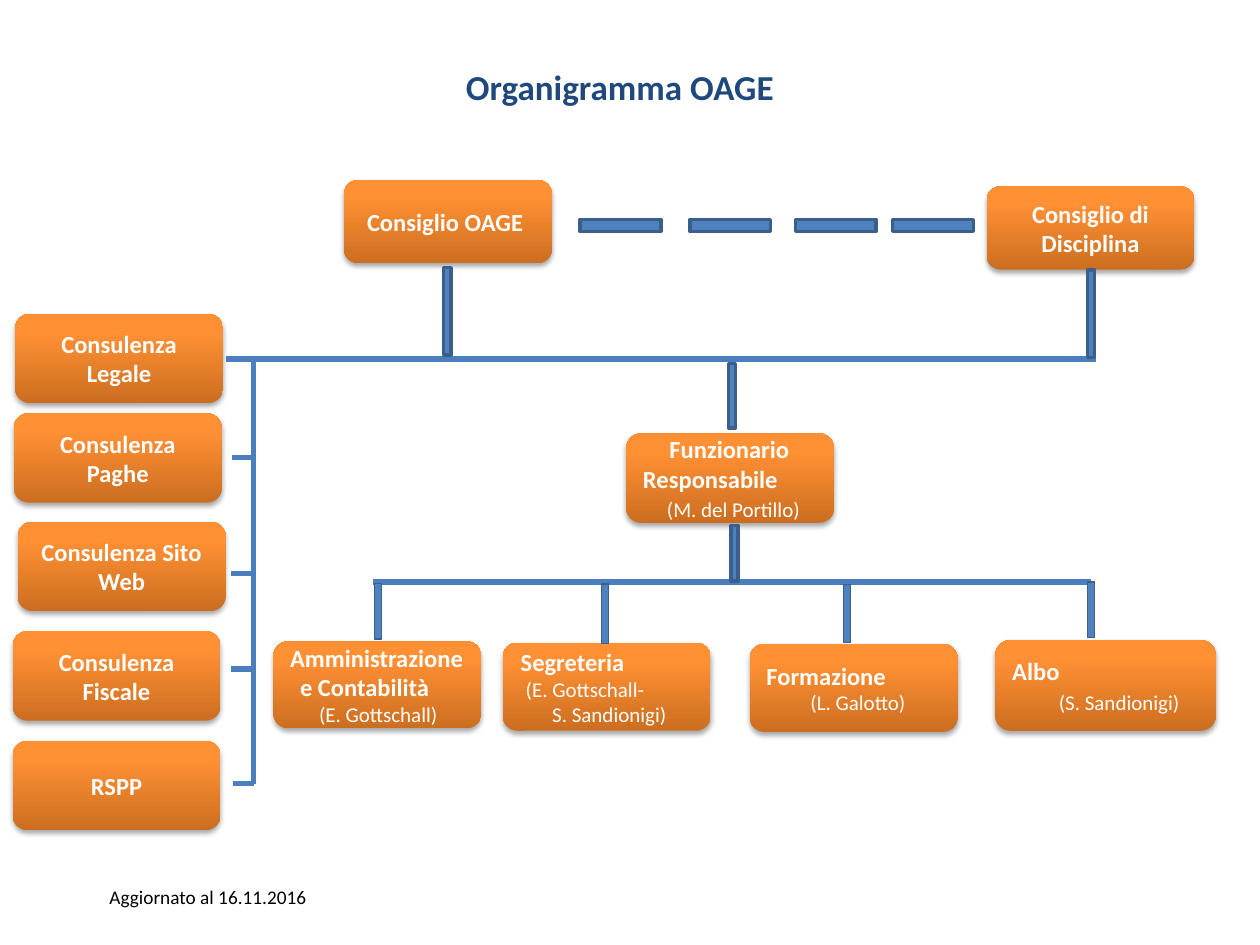
from dataclasses import dataclass
from pptx import Presentation
from pptx.dml.color import RGBColor as Rgb
from pptx.enum.shapes import MSO_CONNECTOR as Conn, MSO_SHAPE as Kind
from pptx.enum.text import MSO_ANCHOR as Anchor, PP_ALIGN as Align
from pptx.oxml import parse_xml as parse
from pptx.oxml.ns import nsdecls, qn
from pptx.util import Inches, Pt


@dataclass
class Theme:
    font: str = "Calibri"
    title: str = "1F497D"
    white: str = "FFFFFF"
    black: str = "000000"
    bar: str = "4F81BD"
    edge: str = "3A5F8C"
    line: str = "4B7EBC"
    stops: tuple = ((0, "CC6E20"), (80, "FF9034"), (100, "FF9136"))
    head: int = 20
    role: int = 14
    name: int = 12
    note: int = 11


class Chart:
    def __init__(self, slide, theme):
        self.slide = slide
        self.theme = theme

    def run(self, para, text, size, color, bold=False):
        run = para.add_run()
        run.text = text
        font = run.font
        font.name, font.size, font.bold = self.theme.font, Pt(size), bold
        font.color.rgb = Rgb.from_string(color)

    def text(self, x, y, w, h, words, size, color, bold=False,
             align=Align.LEFT, anchor=Anchor.TOP):
        frame = self.slide.shapes.add_textbox(
            Inches(x), Inches(y), Inches(w), Inches(h)).text_frame
        frame.word_wrap = True
        frame.vertical_anchor = anchor
        para = frame.paragraphs[0]
        para.alignment = align
        self.run(para, words, size, color, bold)

    def box(self, x, y, w, h):
        """Rounded orange box with a gradient and a soft shadow."""
        box = self.slide.shapes.add_shape(
            Kind.ROUNDED_RECTANGLE, Inches(x), Inches(y), Inches(w), Inches(h))
        box.line.fill.background()
        stops = "".join(
            f'<a:gs pos="{pos * 1000}"><a:srgbClr val="{color}"/></a:gs>'
            for pos, color in self.theme.stops)
        props = box._element.spPr
        props.find(qn("a:prstGeom")).addnext(parse(
            f'<a:gradFill {nsdecls("a")} rotWithShape="1"><a:gsLst>{stops}'
            '</a:gsLst><a:lin ang="16200000" scaled="0"/></a:gradFill>'))
        props.append(parse(
            f'<a:effectLst {nsdecls("a")}><a:outerShdw blurRad="{Pt(3.1)}" '
            f'dist="{Pt(1.8)}" dir="5400000" rotWithShape="0">'
            '<a:srgbClr val="000000"><a:alpha val="35000"/></a:srgbClr>'
            '</a:outerShdw></a:effectLst>'))
        frame = box.text_frame
        frame.word_wrap = True
        frame.vertical_anchor = Anchor.MIDDLE
        return frame

    def role(self, x, y, h, words):
        para = self.box(x, y, BOX_W, h).paragraphs[0]
        para.alignment = Align.CENTER
        self.run(para, words, self.theme.role, self.theme.white, True)

    def staff(self, x, y, w, h, gap, roles, names):
        """Role lines, then name lines, each with its own indent."""
        frame = self.box(x, y, w, h)
        rows = [(row, True) for row in roles] + [(row, False) for row in names]
        for i, ((words, dent), bold) in enumerate(rows):
            para = frame.paragraphs[0] if i == 0 else frame.add_paragraph()
            para.alignment = Align.LEFT
            para._p.get_or_add_pPr().set("marL", str(Inches(dent)))
            if i == len(roles):
                para.space_before = Pt(gap)
            size = self.theme.role if bold else self.theme.name
            self.run(para, words, size, self.theme.white, bold)

    def bar(self, x, y, w, h, edge=2, turn=270):
        bar = self.slide.shapes.add_shape(
            Kind.MATH_MINUS, Inches(x), Inches(y), Inches(w), Inches(h))
        bar.rotation = turn
        bar.shadow.inherit = False
        bar.fill.solid()
        bar.fill.fore_color.rgb = Rgb.from_string(self.theme.bar)
        bar.line.color.rgb = Rgb.from_string(self.theme.edge)
        bar.line.width = Pt(edge)

    def line(self, x1, y1, x2, y2):
        line = self.slide.shapes.add_connector(
            Conn.STRAIGHT, Inches(x1), Inches(y1), Inches(x2), Inches(y2))
        line.line.color.rgb = Rgb.from_string(self.theme.line)
        line.line.width = Pt(3)
        line._element.spPr.append(parse(f'<a:effectLst {nsdecls("a")}/>'))


BOX_W = 1.65
BAR_H = 0.24


def main():
    deck = Presentation()
    deck.slide_width, deck.slide_height = Inches(10), Inches(7.5)
    theme = Theme()
    chart = Chart(deck.slides.add_slide(deck.slide_layouts[6]), theme)

    # Title
    chart.text(0.67, 0.29, 8.5, 0.79, "Organigramma OAGE", theme.head,
               theme.title, True, Align.CENTER, Anchor.MIDDLE)

    # Councils, joined by a dashed row
    chart.role(2.73, 1.43, 0.66, "Consiglio OAGE ")
    chart.role(7.83, 1.48, 0.66, "Consiglio di Disciplina")
    for x in (4.49, 5.36, 6.2, 6.97):
        chart.bar(x, 1.59, 0.87, 0.4, turn=0)

    # Advisers
    for x, y, words in ((0.12, 2.49, "Consulenza Legale"),
                        (0.11, 3.28, "Consulenza Paghe"),
                        (0.14, 4.14, "Consulenza Sito Web"),
                        (0.1, 5.01, "Consulenza Fiscale"),
                        (0.1, 5.88, "RSPP")):
        chart.role(x, y, 0.71, words)

    # Main lines and the branches to the advisers
    chart.line(1.79, 2.85, 8.7, 2.85)
    chart.line(2.96, 4.62, 8.66, 4.62)
    chart.line(2.01, 2.85, 2.01, 6.22)
    for x, y in ((1.84, 3.63), (1.83, 4.55), (1.83, 5.31), (1.85, 6.22)):
        chart.line(x, y, x + 0.17, y)

    # Officer and offices
    chart.staff(4.97, 3.44, BOX_W, 0.71, 2,
                [("Funzionario", 0.21), ("Responsabile", 0)],
                [("(M. del Portillo)", 0.19)])
    chart.staff(2.17, 5.09, BOX_W, 0.69, 0,
                [("Amministrazione", 0), ("e Contabilità", 0.08)],
                [("(E. Gottschall)", 0.23)])
    chart.staff(3.99, 5.1, BOX_W, 0.7, 0, [("Segreteria", 0.01)],
                [("(E. Gottschall-", 0.05), ("S. Sandionigi)", 0.26)])
    chart.staff(5.95, 5.11, BOX_W, 0.7, 0, [("Formazione", 0)],
                [("(L. Galotto)", 0.35)])
    chart.staff(7.9, 5.08, 1.75, 0.72, 2, [("Albo", 0)],
                [("(S. Sandionigi)", 0.37)])

    # Upright bars: thick between levels, thin above the offices
    for x, y, w in ((8.19, 2.37, 0.94), (3.08, 2.35, 0.94),
                    (5.46, 3.02, 0.7), (5.53, 4.27, 0.6)):
        chart.bar(x, y, w, BAR_H)
    for x, y, w in ((2.7, 4.73, 0.6), (4.48, 4.75, 0.64),
                    (6.41, 4.75, 0.63), (8.36, 4.72, 0.6)):
        chart.bar(x, y, w, BAR_H, edge=0)

    # Date of update
    chart.text(0.77, 6.98, 1.98, 0.29, "Aggiornato al 16.11.2016",
               theme.note, theme.black)

    deck.save("out.pptx")


if __name__ == "__main__":
    main()
